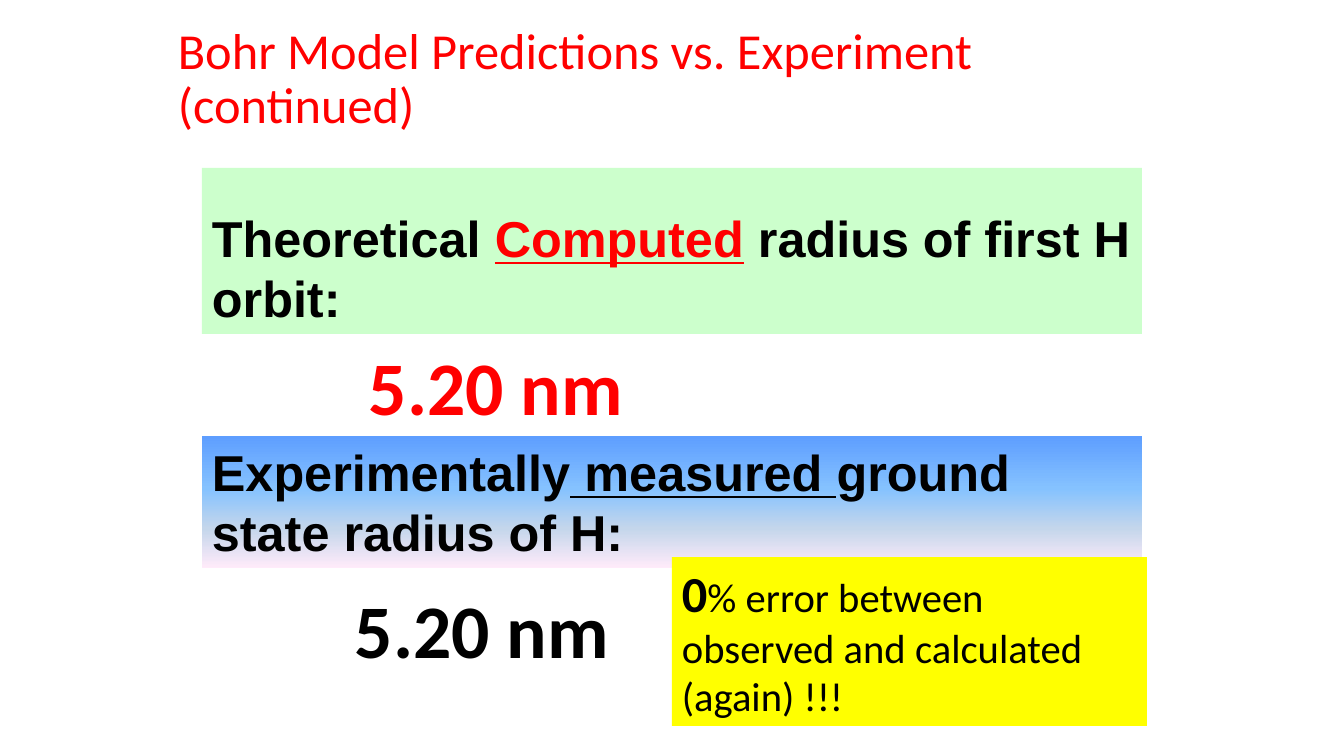
import pptx
import pptx.dml.color
import pptx.enum.text
import pptx.oxml
import pptx.oxml.ns
import pptx.util

EMU_PER_PX = 914400 / 100.8
BLACK, RED, GREEN, YELLOW = "000000", "FF0000", "CCFFCC", "FFFF00"
SKY = [(0, "5E9EFF"), (40, "85C2FF"), (70, "C4D6EB"), (100, "FFEBFA")]


def px(length):
    return pptx.util.Emu(round(length * EMU_PER_PX))


def color(value):
    return pptx.dml.color.RGBColor.from_string(value)


def fill_gradient(fill, box, stops):
    """Fill the box from top to bottom with (percent, colour) stops."""
    fill.gradient()
    fill.gradient_angle = 270
    stop_list = box._element.spPr.find(".//" + pptx.oxml.ns.qn("a:gsLst"))
    for stop in list(stop_list):
        stop_list.remove(stop)
    for percent, value in stops:
        stop_list.append(pptx.oxml.parse_xml(
            f'<a:gs {pptx.oxml.ns.nsdecls("a")} pos="{percent * 1000}">'
            f'<a:srgbClr val="{value}"/></a:gs>'))


def add_text(page, place, spans, font, size, bold=True, ink=BLACK, top_inset=5):
    """Add a one-paragraph box; each span is its text and its own font settings."""
    box = page.shapes.add_textbox(*map(px, place))
    frame = box.text_frame
    frame.word_wrap = True
    frame.margin_top = px(top_inset)
    para = frame.paragraphs[0]
    para.font.name = font
    para.font.size = pptx.util.Pt(size)
    para.font.bold = bold
    para.font.color.rgb = color(ink)
    for text, settings in spans:
        span = para.add_run()
        span.text = text
        span.font.name = font
        span.font.size = pptx.util.Pt(settings.get("size", size))
        span.font.bold = settings.get("bold", bold)
        span.font.underline = settings.get("underline")
        span.font.color.rgb = color(settings.get("ink", ink))
    return box


def add_title(page, place, text):
    title = add_text(page, place, [(text, {})], "Calibri", 36, bold=False, ink=RED)
    title.text_frame.vertical_anchor = pptx.enum.text.MSO_ANCHOR.MIDDLE
    title.text_frame.paragraphs[0].line_spacing = 0.9


def add_panel(page, place, fill, spans, font, **settings):
    panel = add_text(page, place, spans, font, 36, **settings)
    if isinstance(fill, str):
        panel.fill.solid()
        panel.fill.fore_color.rgb = color(fill)
    else:
        fill_gradient(panel.fill, panel, fill)


def add_radius(page, place, ink):
    add_text(page, place, [("5.20 nm", {})], "Calibri", 54, ink=ink)


def main():
    deck = pptx.Presentation()
    deck.slide_width, deck.slide_height = px(1344), px(756)
    page = deck.slides.add_slide(deck.slide_layouts[6])

    add_panel(page, (202, 168, 940, 166), GREEN, [
        ("Theoretical ", {}),
        ("Computed", {"ink": RED, "underline": True}),
        (" radius of first H orbit:", {}),
    ], "Arial", top_inset=39)
    add_title(page, (168, 17, 975, 126),
              "Bohr Model Predictions vs. Experiment (continued)")
    add_panel(page, (202, 436, 940, 132), SKY, [
        ("Experimentally", {}),
        (" measured ", {"underline": True}),
        ("ground state radius of H:", {}),
    ], "Arial")
    add_radius(page, (359, 335, 328, 102), RED)
    add_radius(page, (345, 578, 345, 102), BLACK)
    add_panel(page, (672, 557, 475, 169), YELLOW, [
        ("0", {}),
        ("% error between observed and calculated (again) !!!",
         {"size": 29, "bold": False}),
    ], "Calibri")

    deck.save("out.pptx")


if __name__ == "__main__":
    main()
